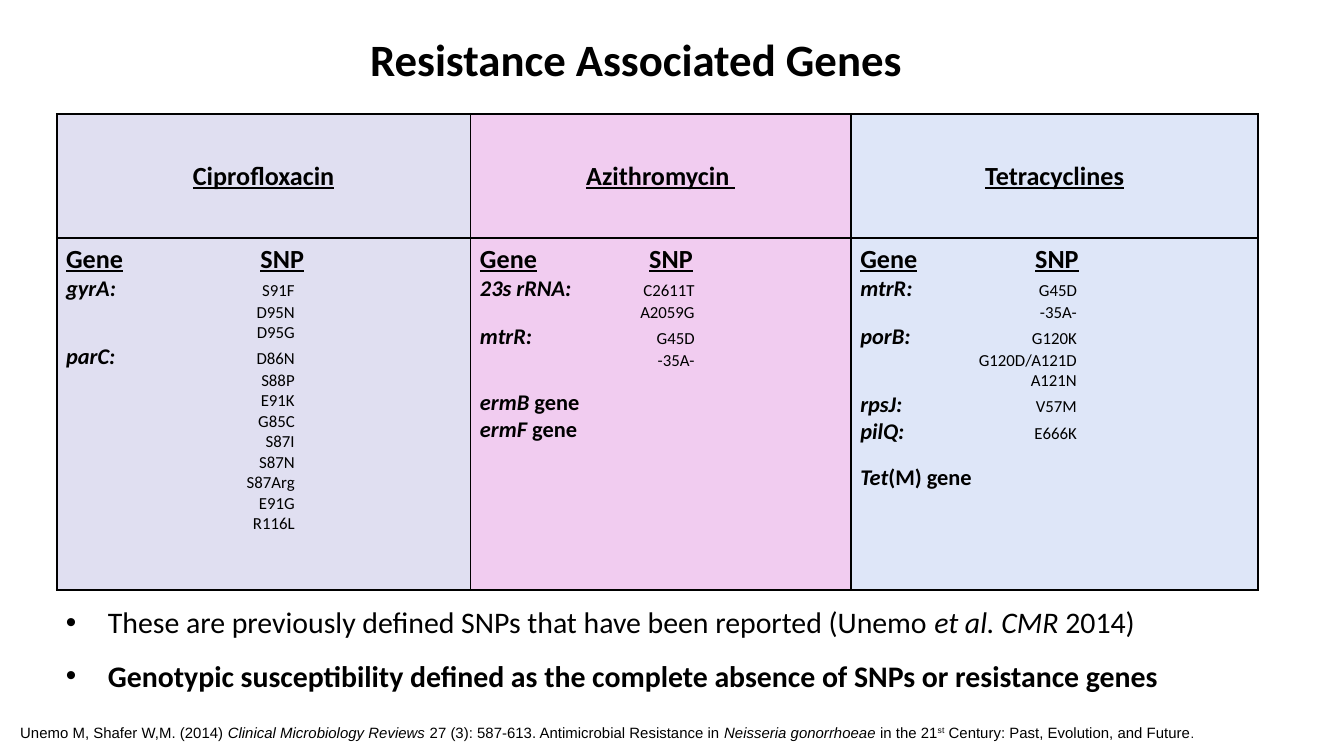
from lxml.etree import SubElement
from pptx import Presentation
from pptx.dml.color import RGBColor
from pptx.enum.text import MSO_ANCHOR as Anchor, PP_ALIGN as Align
from pptx.oxml.ns import qn
from pptx.util import Pt

BLACK = RGBColor(0, 0, 0)
LAVENDER = RGBColor(0xE0, 0xDF, 0xF1)
PINK = RGBColor(0xF1, 0xCC, 0xF0)
BLUE = RGBColor(0xDE, 0xE6, 0xF8)

TITLE = "Resistance Associated Genes"
DRUGS = [
    {"name": "Ciprofloxacin", "fill": LAVENDER, "width": 221.76,
     "header_tab": 127.5, "snp_tab": 122.5,
     "genes": [("gyrA:", ["S91F", "D95N", "D95G"]),
               ("parC:", ["D86N", "S88P", "E91K", "G85C", "S87I", "S87N",
                          "S87Arg", "E91G", "R116L"])],
     "whole_genes": []},
    {"name": "Azithromycin ", "fill": PINK, "width": 203.76,
     "header_tab": 114, "snp_tab": 115,
     "genes": [("23s rRNA:", ["C2611T", "A2059G"]),
               ("mtrR:", ["G45D", "-35A-"])],
     "whole_genes": [("ermB ", "gene"), ("ermF ", "gene")]},
    {"name": "Tetracyclines", "fill": BLUE, "width": 218.16,
     "header_tab": 117, "snp_tab": 116,
     "genes": [("mtrR:", ["G45D", "-35A-"]),
               ("porB:", ["G120K", "G120D/A121D", "A121N"]),
               ("rpsJ:", ["V57M"]), ("pilQ:", ["E666K"])],
     "whole_genes": [("Tet", "(M) gene")]},
]
ROW_HEIGHTS = [66.24, 188.64]
BULLETS = [
    [("These are previously defined SNPs that have been reported (Unemo ", {}),
     ("et al. CMR ", {"italic": True}), ("2014)", {})],
    [("Genotypic susceptibility defined as the complete absence of SNPs "
      "or resistance genes", {"bold": True})],
]
CITATION = [
    ("Unemo M, Shafer W,M. (2014) ", {}),
    ("Clinical Microbiology Reviews ", {"italic": True}),
    ("27 (3): 587-613. Antimicrobial Resistance in ", {}),
    ("Neisseria gonorrhoeae ", {"italic": True}),
    ("in the 21", {}),
    ("st", {"superscript": True}),
    (" Century: Past, Evolution, and Future", {}),
    (".", {"size": 7}),
]


def add_run(paragraph, text, size, name="Calibri", bold=False, italic=False,
            underline=False, superscript=False):
    run = paragraph.add_run()
    run.text = text
    font = run.font
    font.size, font.name = Pt(size), name
    font.bold, font.italic, font.underline = bold, italic, underline
    font.color.rgb = BLACK
    if superscript:
        run._r.get_or_add_rPr().set("baseline", "30000")


def next_paragraph(frame):
    first = frame.paragraphs[0]
    return frame.add_paragraph() if first.runs else first


def set_margins(target):
    target.margin_left = target.margin_right = Pt(5)
    target.margin_top = target.margin_bottom = Pt(3)


def add_text_box(slide, left, top, width, height):
    frame = slide.shapes.add_textbox(Pt(left), Pt(top), Pt(width), Pt(height)).text_frame
    frame.word_wrap = True
    set_margins(frame)
    return frame


def add_right_tab(paragraph, position):
    tabs = SubElement(paragraph._p.get_or_add_pPr(), qn("a:tabLst"))
    SubElement(tabs, qn("a:tab"), pos=str(Pt(position)), algn="r")


def format_cell(cell, fill):
    set_margins(cell)
    properties = cell._tc.get_or_add_tcPr()
    for side in ("lnL", "lnR", "lnT", "lnB"):
        line = SubElement(properties, qn("a:" + side), w=str(Pt(1)))
        solid = SubElement(line, qn("a:solidFill"))
        SubElement(solid, qn("a:srgbClr"), val=str(BLACK))
    cell.fill.solid()
    cell.fill.fore_color.rgb = fill


def fill_gene_cell(frame, drug):
    header = next_paragraph(frame)
    add_right_tab(header, drug["header_tab"])
    add_run(header, "Gene", 14, bold=True, underline=True)
    add_run(header, "\t", 14)
    add_run(header, "SNP", 14, bold=True, underline=True)
    for gene, snps in drug["genes"]:
        for index, snp in enumerate(snps):
            paragraph = next_paragraph(frame)
            add_right_tab(paragraph, drug["snp_tab"])
            if index == 0:
                add_run(paragraph, gene, 12, bold=True, italic=True)
            add_run(paragraph, "\t" + snp, 9)
    for index, (gene, suffix) in enumerate(drug["whole_genes"]):
        paragraph = next_paragraph(frame)
        paragraph.space_before = Pt(0 if index else 9.8)
        add_run(paragraph, gene, 12, bold=True, italic=True)
        add_run(paragraph, suffix, 12, bold=True)


def add_gene_table(slide):
    table = slide.shapes.add_table(2, len(DRUGS), Pt(30.4), Pt(61.2),
                                   Pt(643.68), Pt(sum(ROW_HEIGHTS))).table
    table.first_row = table.horz_banding = False
    for row, height in zip(table.rows, ROW_HEIGHTS):
        row.height = Pt(height)
    for index, drug in enumerate(DRUGS):
        table.columns[index].width = Pt(drug["width"])
        name_cell, gene_cell = table.cell(0, index), table.cell(1, index)
        for cell in (name_cell, gene_cell):
            format_cell(cell, drug["fill"])
        name_cell.vertical_anchor = Anchor.MIDDLE
        paragraph = name_cell.text_frame.paragraphs[0]
        paragraph.alignment = Align.CENTER
        add_run(paragraph, drug["name"], 14, bold=True, underline=True)
        fill_gene_cell(gene_cell.text_frame, drug)


def add_title(slide):
    title = slide.shapes.title
    title.left, title.top, title.width, title.height = Pt(30.4), Pt(-29.5), Pt(620.6), Pt(78.5)
    frame = title.text_frame
    set_margins(frame)
    frame.vertical_anchor = Anchor.BOTTOM
    paragraph = frame.paragraphs[0]
    paragraph.alignment = Align.CENTER
    add_run(paragraph, TITLE, 24, bold=True)


def add_bullets(slide):
    frame = add_text_box(slide, 30.4, 311, 643.7, 63.4)
    for runs in BULLETS:
        paragraph = next_paragraph(frame)
        paragraph.line_spacing = 1.5
        properties = paragraph._p.get_or_add_pPr()
        properties.set("marL", str(Pt(22.5)))
        properties.set("indent", str(Pt(-22.5)))
        SubElement(properties, qn("a:buFont"), typeface="Arial")
        SubElement(properties, qn("a:buChar"), char="•")
        for text, style in runs:
            add_run(paragraph, text, 16, **style)


def add_citation(slide):
    paragraph = add_text_box(slide, 5.8, 384.5, 714.2, 15.1).paragraphs[0]
    for text, style in CITATION:
        add_run(paragraph, text, **{"size": 8, "name": "Arial", **style})


def main():
    """Build the slide of resistance genes and their SNPs per antibiotic."""
    presentation = Presentation()
    presentation.slide_width, presentation.slide_height = Pt(720), Pt(405)
    slide = presentation.slides.add_slide(presentation.slide_layouts[5])
    add_title(slide)
    add_bullets(slide)
    add_citation(slide)
    add_gene_table(slide)
    presentation.save("out.pptx")


if __name__ == "__main__":
    main()
